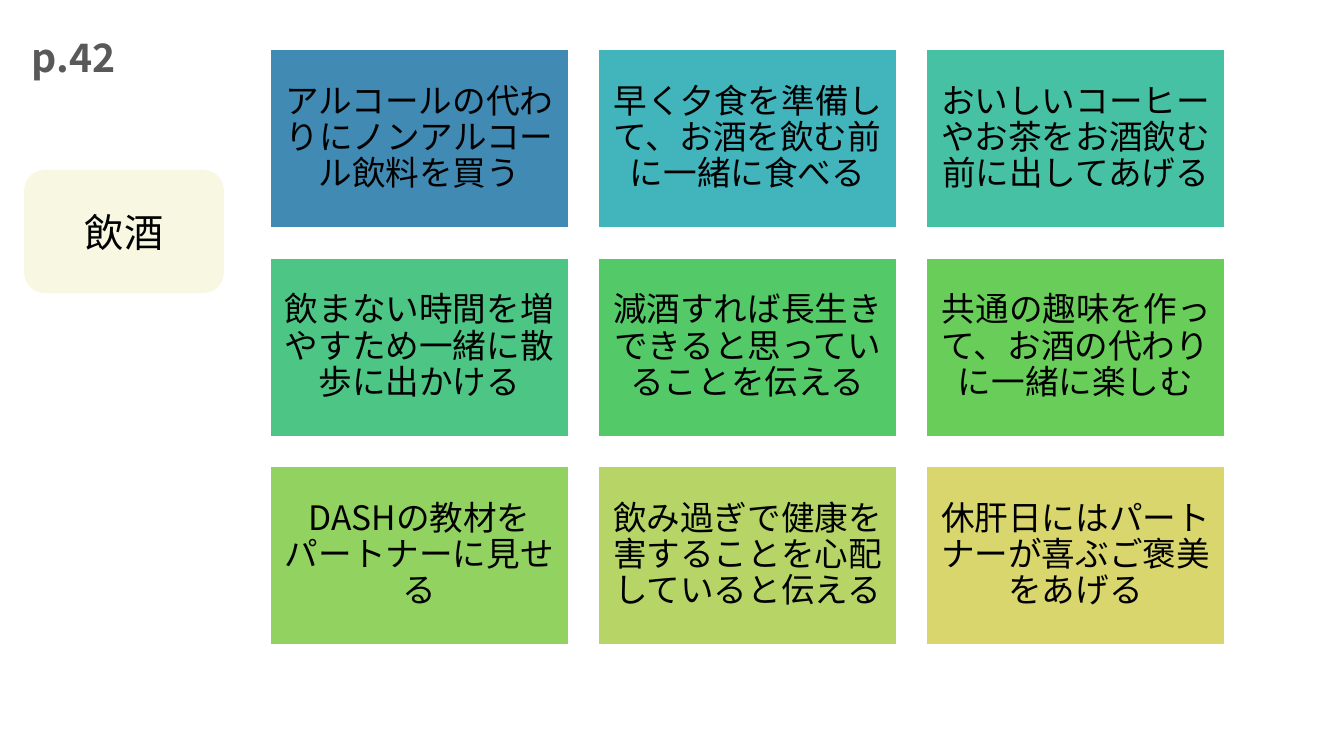
from pptx import Presentation
from pptx.dml.color import RGBColor
from pptx.enum.shapes import MSO_SHAPE
from pptx.enum.text import MSO_ANCHOR, PP_ALIGN
from pptx.oxml.ns import qn
from pptx.util import Pt

FONT = "Noto Sans CJK JP"
BLACK = RGBColor(0x00, 0x00, 0x00)
WHITE = RGBColor(0xFF, 0xFF, 0xFF)
GRAY = RGBColor(0x59, 0x59, 0x59)
CREAM = RGBColor(0xF7, 0xF7, 0xE2)
COLUMNS = 3
CARDS = [
    ("アルコールの代わりにノンアルコール飲料を買う", RGBColor(0x41, 0x8A, 0xB3)),
    ("早く夕食を準備して、お酒を飲む前に一緒に食べる", RGBColor(0x42, 0xB5, 0xBC)),
    ("おいしいコーヒーやお茶をお酒飲む前に出してあげる", RGBColor(0x47, 0xC1, 0xA4)),
    ("飲まない時間を増やすため一緒に散歩に出かける", RGBColor(0x4D, 0xC6, 0x85)),
    ("減酒すれば長生きできると思っていることを伝える", RGBColor(0x53, 0xCA, 0x67)),
    ("共通の趣味を作って、お酒の代わりに一緒に楽しむ", RGBColor(0x69, 0xCE, 0x59)),
    ("DASHの教材をパートナーに見せる", RGBColor(0x91, 0xD2, 0x60)),
    ("飲み過ぎで健康を害することを心配していると伝える", RGBColor(0xB7, 0xD5, 0x66)),
    ("休肝日にはパートナーが喜ぶご褒美をあげる", RGBColor(0xD9, 0xD6, 0x6D)),
]


def write(sp, text, size=28, color=BLACK, bold=False, spacing=None, inset=None):
    """Put one centred paragraph in the shape."""
    tf = sp.text_frame
    tf.word_wrap = True
    tf.vertical_anchor = MSO_ANCHOR.MIDDLE
    if inset is not None:
        tf.margin_left = tf.margin_right = Pt(inset)
        tf.margin_top = tf.margin_bottom = Pt(inset)
    p = tf.paragraphs[0]
    p.alignment = PP_ALIGN.CENTER
    p.line_spacing = spacing
    r = p.add_run()
    r.text = text
    r.font.name = FONT
    r.font.size = Pt(size)
    r.font.bold = bold
    r.font.color.rgb = color
    ea = r.font._element.makeelement(qn("a:ea"), {"typeface": FONT})
    r.font._element.find(qn("a:latin")).addnext(ea)


def add_box(s, kind, fill, x, y, w, h):
    """Add a filled shape without shadow or outline."""
    sp = s.shapes.add_shape(kind, Pt(x), Pt(y), Pt(w), Pt(h))
    sp.shadow.inherit = False
    sp.fill.solid()
    sp.fill.fore_color.rgb = fill
    sp.line.fill.background()
    return sp


def add_page_mark(s, x, y, w, h):
    """Add the page reference."""
    sp = s.shapes.add_textbox(Pt(x), Pt(y), Pt(w), Pt(h))
    write(sp, "p.42", color=GRAY, bold=True)


def add_topic(s, x, y, w, h):
    """Add the rounded topic label."""
    write(add_box(s, MSO_SHAPE.ROUNDED_RECTANGLE, CREAM, x, y, w, h), "飲酒")


def add_cards(s, x, y, w, h, gap):
    """Lay the advice cards out in an even grid inside the box."""
    rows = len(CARDS) // COLUMNS
    card_w = (w - gap * (COLUMNS - 1)) / COLUMNS
    card_h = (h - gap * (rows - 1)) / rows
    for i, (text, fill) in enumerate(CARDS):
        row, col = divmod(i, COLUMNS)
        left, top = x + col * (card_w + gap), y + row * (card_h + gap)
        sp = add_box(s, MSO_SHAPE.RECTANGLE, fill, left, top, card_w, card_h)
        sp.line.color.rgb = WHITE
        sp.line.width = Pt(1)
        write(sp, text, size=24, spacing=0.9, inset=7.2)


def main():
    """Build the slide and save it."""
    prs = Presentation()
    prs.slide_width, prs.slide_height = Pt(960), Pt(540)
    s = prs.slides.add_slide(prs.slide_layouts[6])
    add_cards(s, 193, 35.3, 681.8, 425.5, 21.3)
    add_topic(s, 17.3, 121.4, 142.6, 88)
    add_page_mark(s, 0, 10, 105, 61)
    prs.save("out.pptx")


if __name__ == "__main__":
    main()
